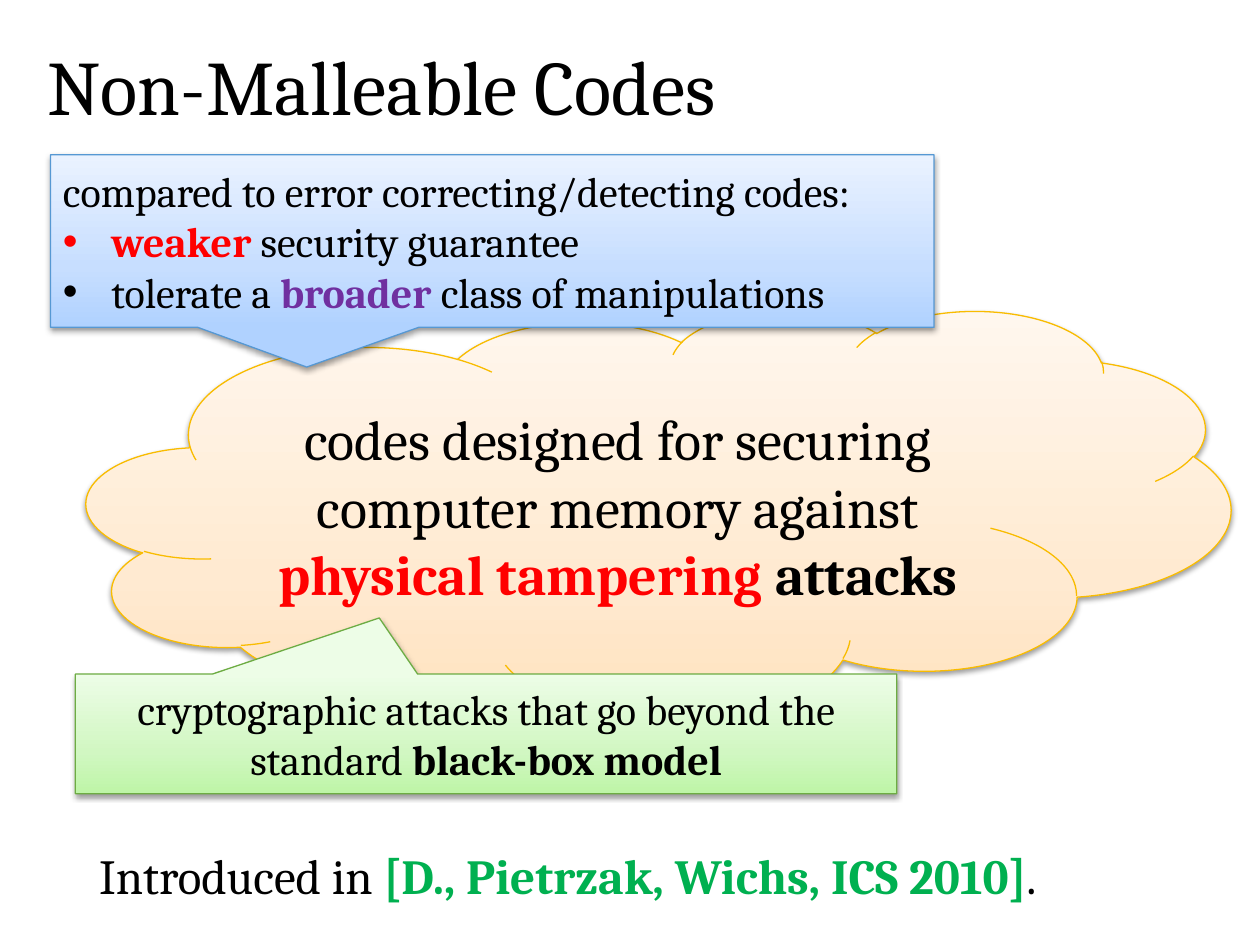
from copy import deepcopy
from dataclasses import dataclass
from typing import Optional

from lxml import etree
from pptx import Presentation
from pptx import util as u
from pptx.dml.color import RGBColor
from pptx.enum import shapes, text
from pptx.oxml import ns


@dataclass(frozen=True)
class Theme:
    font: str = "Cambria"
    title_size: int = 44
    cloud_size: int = 32
    citation_size: int = 28
    callout_size: int = 24
    ink: str = "000000"
    red: str = "FF0000"
    purple: str = "7030A0"
    green: str = "00B050"
    orange_fill: tuple[str, ...] = ("FFE2BD", "FFEAD1", "FFF7EE")
    orange_line: str = "F9BC00"
    blue_fill: tuple[str, ...] = ("B0D2FF", "C7DEFF", "EAF2FF")
    blue_line: str = "5698D3"
    green_fill: tuple[str, ...] = ("BEF5A7", "D1F7C2", "EDFDE7")
    green_line: str = "6DAC43"
    stops: tuple[float, ...] = (0, 0.35, 1)
    line_width: float = 0.75


THEME = Theme()


@dataclass(frozen=True)
class Span:
    words: str
    color: str = THEME.ink
    bold: bool = False


@dataclass(frozen=True)
class Line:
    spans: tuple[Span, ...]
    bullet: bool = False
    centred: bool = False
    spacing: Optional[float] = None


@dataclass(frozen=True)
class Box:
    left: float
    top: float
    width: float
    height: float

    def lengths(self) -> tuple[u.Length, ...]:
        return tuple(u.Cm(value) for value in (self.left, self.top, self.width, self.height))


@dataclass(frozen=True)
class Bubble:
    kind: shapes.MSO_SHAPE
    box: Box
    fill: tuple[str, ...]
    outline: str
    size: int
    lines: tuple[Line, ...]
    tip: tuple[float, ...] = ()


@dataclass(frozen=True)
class Caption:
    box: Box
    size: int
    line: Line
    wrap: bool


TITLE = Caption(
    Box(0.71, 0.74, 24.21, 2.18), THEME.title_size,
    Line((Span("Non-Malleable Codes"),), spacing=0.9), True)
CITATION = Caption(
    Box(1.75, 16.92, 20.4, 1.45), THEME.citation_size,
    Line((Span("Introduced in "),
          Span("[D., Pietrzak, Wichs, ICS 2010]", THEME.green, True),
          Span("."))), False)
DEFINITION = Bubble(
    shapes.MSO_SHAPE.CLOUD, Box(1.75, 6.25, 23.06, 8.28),
    THEME.orange_fill, THEME.orange_line, THEME.cloud_size,
    (Line((Span("codes designed for securing computer memory against "),
           Span("physical tampering ", THEME.red, True),
           Span("attacks", bold=True)), centred=True),))
COMPARISON = Bubble(
    shapes.MSO_SHAPE.RECTANGULAR_CALLOUT, Box(1.02, 3.12, 17.81, 3.48),
    THEME.blue_fill, THEME.blue_line, THEME.callout_size,
    (Line((Span("compared to error correcting/detecting codes:"),)),
     Line((Span(" weaker ", THEME.red, True),
           Span("security guarantee")), bullet=True),
     Line((Span(" tolerate a "), Span("broader", THEME.purple, True),
           Span(" class of manipulations")), bullet=True)),
    (-0.21, 0.73))
ATTACKS = Bubble(
    shapes.MSO_SHAPE.RECTANGULAR_CALLOUT, Box(1.52, 13.59, 16.56, 2.41),
    THEME.green_fill, THEME.green_line, THEME.callout_size,
    (Line((Span("cryptographic attacks that go beyond the standard "),
           Span("black-box model", bold=True)), centred=True),),
    (-0.13, -0.97))


def add_bullet(paragraph) -> None:
    properties = paragraph._p.get_or_add_pPr()
    indent = u.Cm(0.79)
    properties.set("marL", str(indent))
    properties.set("indent", str(-indent))
    etree.SubElement(properties, ns.qn("a:buFont"), typeface="Arial")
    etree.SubElement(properties, ns.qn("a:buChar"), char="•")


def write_lines(text_frame, lines: tuple[Line, ...], size: int) -> None:
    for index, line in enumerate(lines):
        paragraph = text_frame.add_paragraph() if index else text_frame.paragraphs[0]
        paragraph.alignment = text.PP_ALIGN.CENTER if line.centred else text.PP_ALIGN.LEFT
        if line.spacing:
            paragraph.line_spacing = line.spacing
        if line.bullet:
            add_bullet(paragraph)
        for span in line.spans:
            run = paragraph.add_run()
            run.text = span.words
            run.font.name = THEME.font
            run.font.size = u.Pt(size)
            run.font.bold = span.bold
            run.font.color.rgb = RGBColor.from_string(span.color)


def fill_gradient(shape, colors: tuple[str, ...]) -> None:
    shape.fill.gradient()
    shape.fill.gradient_angle = 90
    stop_list = shape._element.spPr.find(ns.qn("a:gradFill")).find(ns.qn("a:gsLst"))
    stop_list.insert(1, deepcopy(stop_list[0]))
    for stop, position, color in zip(shape.fill.gradient_stops, THEME.stops, colors):
        stop.position = position
        stop.color.rgb = RGBColor.from_string(color)


def add_shadow(shape) -> None:
    shape.shadow.inherit = False
    effects = shape._element.spPr.find(ns.qn("a:effectLst"))
    shadow = etree.SubElement(
        effects, ns.qn("a:outerShdw"), blurRad=str(u.Pt(3.1)), dist=str(u.Pt(1.6)),
        dir="5400000", rotWithShape="0")
    color = etree.SubElement(shadow, ns.qn("a:srgbClr"), val=THEME.ink)
    etree.SubElement(color, ns.qn("a:alpha"), val="38000")


def draw_bubble(slide, bubble: Bubble) -> None:
    shape = slide.shapes.add_shape(bubble.kind, *bubble.box.lengths())
    for index, value in enumerate(bubble.tip):
        shape.adjustments[index] = value
    fill_gradient(shape, bubble.fill)
    shape.line.color.rgb = RGBColor.from_string(bubble.outline)
    shape.line.width = u.Pt(THEME.line_width)
    add_shadow(shape)
    shape.text_frame.word_wrap = True
    shape.text_frame.vertical_anchor = text.MSO_ANCHOR.MIDDLE
    write_lines(shape.text_frame, bubble.lines, bubble.size)


def draw_caption(slide, caption: Caption) -> None:
    shape = slide.shapes.add_textbox(*caption.box.lengths())
    shape.text_frame.word_wrap = caption.wrap
    shape.text_frame.vertical_anchor = text.MSO_ANCHOR.MIDDLE
    write_lines(shape.text_frame, (caption.line,), caption.size)


def main() -> None:
    presentation = Presentation()
    presentation.slide_width = u.Cm(25.4)
    presentation.slide_height = u.Cm(19.05)
    slide = presentation.slides.add_slide(presentation.slide_layouts[6])
    draw_caption(slide, TITLE)
    draw_bubble(slide, DEFINITION)
    draw_caption(slide, CITATION)
    for callout in (COMPARISON, ATTACKS):
        draw_bubble(slide, callout)
    presentation.save("out.pptx")


if __name__ == "__main__":
    main()
